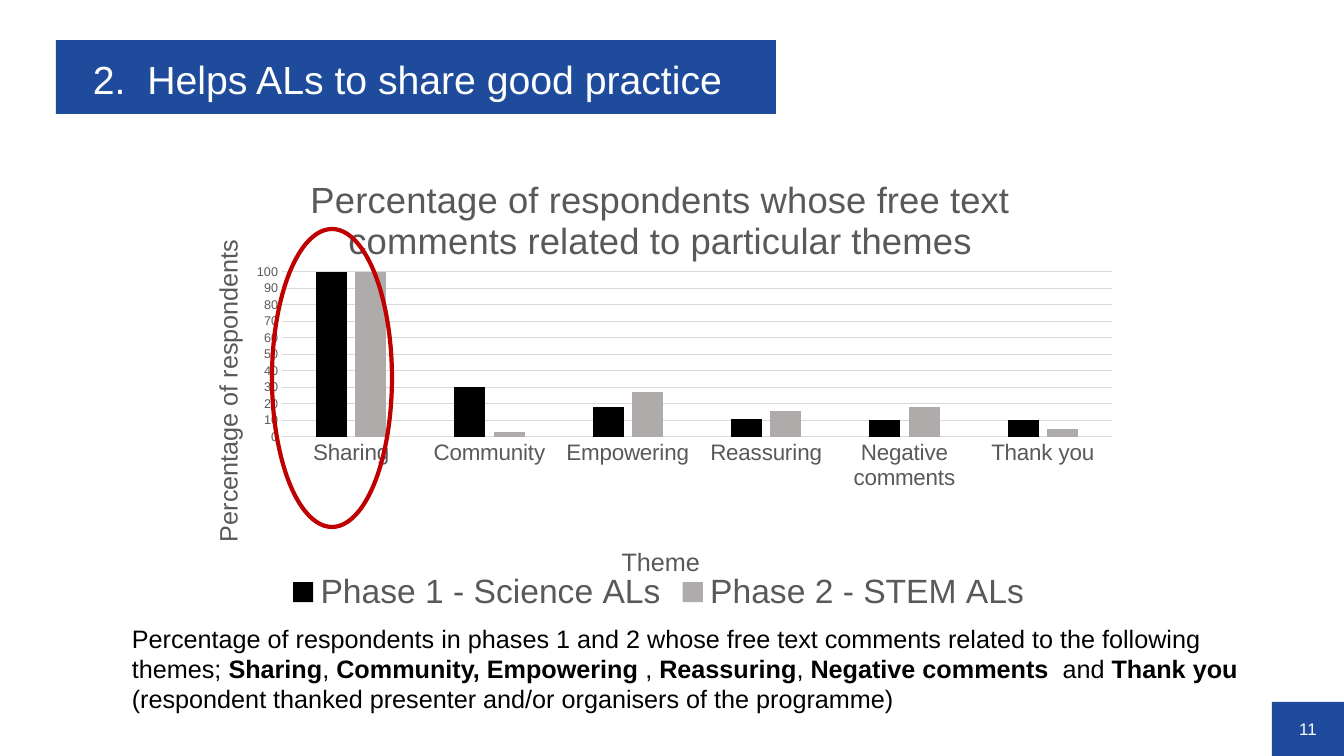
from dataclasses import dataclass

from lxml import etree
from pptx import Presentation
from pptx import util as u
from pptx.chart.data import CategoryChartData
from pptx.dml.color import RGBColor
from pptx.enum import chart as charts
from pptx.enum import shapes, text
from pptx.oxml.ns import qn


@dataclass(frozen=True)
class Theme:
    """Colours, type sizes and font of the slide."""
    blue: str = "1E4B9B"
    white: str = "FFFFFF"
    black: str = "000000"
    silver: str = "AFABAB"
    grey: str = "595959"
    rule: str = "D9D9D9"
    red: str = "C00000"
    font: str = "Arial"
    heading: int = 28
    chart_title: float = 26
    legend: int = 24
    body: int = 18
    category: int = 16
    number: int = 12
    chart_text: int = 10
    scale: int = 9


THEME = Theme()
CHART_BOX = (176, 149, 955, 470)
THEMES = ["Sharing", "Community", "Empowering", "Reassuring", "Negative comments", "Thank you"]
PHASES = [
    ("Phase 1 - Science ALs", [100, 30, 18, 11, 10, 10], THEME.black),
    ("Phase 2 - STEM ALs", [100, 3, 27, 16, 18, 5], THEME.silver),
]
CAPTION = [
    ("Percentage of respondents in phases 1 and 2 whose free text comments "
     "related to the following themes; ", False),
    ("Sharing", True), (", ", False),
    ("Community, Empowering", True), (" , ", False),
    ("Reassuring", True), (", ", False),
    ("Negative comments", True), ("  and ", False),
    ("Thank you", True),
    (" (respondent thanked presenter and/or organisers of the programme)", False),
]


def px(length):
    """Turn pixels into EMU."""
    return u.Emu(round(length * 914400 / 100.8))


def paint(fill, colour):
    """Give a fill one solid colour."""
    fill.solid()
    fill.fore_color.rgb = RGBColor.from_string(colour)


def set_font(font, size, colour):
    """Set face, size and colour of a regular-weight font."""
    font.name = THEME.font
    font.size = u.Pt(size)
    font.bold = False
    font.color.rgb = RGBColor.from_string(colour)


def set_line(line, colour, width):
    """Set colour and width of a line."""
    line.color.rgb = RGBColor.from_string(colour)
    line.width = u.Pt(width)


def add_heading(page, words, box):
    """Turn the title placeholder into a blue heading bar."""
    title = page.shapes.title
    title.left, title.top, title.width, title.height = map(px, box)
    paint(title.fill, THEME.blue)
    frame = title.text_frame
    frame.text = words
    frame.auto_size = text.MSO_AUTO_SIZE.NONE
    frame.vertical_anchor = text.MSO_ANCHOR.MIDDLE
    frame.margin_left, frame.margin_top = px(37), px(4)
    frame.margin_right = frame.margin_bottom = 0
    para = frame.paragraphs[0]
    para.alignment = text.PP_ALIGN.LEFT
    set_font(para.font, THEME.heading, THEME.white)


def add_page_number(page, number, box):
    """Add the blue corner block with the page number."""
    block = page.shapes.add_shape(shapes.MSO_SHAPE.RECTANGLE, *map(px, box))
    block.shadow.inherit = False
    paint(block.fill, THEME.blue)
    block.line.fill.background()
    frame = block.text_frame
    frame.margin_left = frame.margin_top = frame.margin_right = frame.margin_bottom = 0
    frame.vertical_anchor = text.MSO_ANCHOR.MIDDLE
    para = frame.paragraphs[0]
    para.text = number
    para.alignment = text.PP_ALIGN.CENTER
    set_font(para.font, THEME.number, THEME.white)


def add_highlight(page, box):
    """Add a red ring around a group of bars."""
    ring = page.shapes.add_shape(shapes.MSO_SHAPE.OVAL, *map(px, box))
    ring.shadow.inherit = False
    ring.fill.background()
    set_line(ring.line, THEME.red, 3)


def add_caption(page, spans, box):
    """Add a wrapped paragraph with some bold spans."""
    frame = page.shapes.add_textbox(*map(px, box)).text_frame
    frame.word_wrap = True
    para = frame.paragraphs[0]
    set_font(para.font, THEME.body, THEME.black)
    for words, bold in spans:
        span = para.add_run()
        span.text = words
        span.font.bold = bold


def place(part, index, left, top, width=None, height=None):
    """Fix a chart part at a slide position given in pixels."""
    for old in part.findall(qn("c:layout")):
        part.remove(old)
    layout = etree.Element(qn("c:layout"))
    manual = etree.SubElement(layout, qn("c:manualLayout"))
    if width:
        etree.SubElement(manual, qn("c:layoutTarget"), val="inner")
    for mode in ("xMode", "yMode"):
        etree.SubElement(manual, qn(f"c:{mode}"), val="edge")
    chart_left, chart_top, chart_width, chart_height = CHART_BOX
    ratios = {"x": (left - chart_left) / chart_width, "y": (top - chart_top) / chart_height}
    if width:
        ratios.update(w=width / chart_width, h=height / chart_height)
    for name, ratio in ratios.items():
        etree.SubElement(manual, qn(f"c:{name}"), val=f"{ratio:.4f}")
    part.insert(index, layout)


def write_title(title, words, size):
    """Write a grey chart or axis title."""
    title.text_frame.text = words
    set_font(title.text_frame.paragraphs[0].font, size, THEME.grey)


def style_axis(axis, words, size):
    """Set title, labels and tick marks of an axis."""
    write_title(axis.axis_title, words, THEME.body)
    set_font(axis.tick_labels.font, size, THEME.grey)
    axis.major_tick_mark = axis.minor_tick_mark = charts.XL_TICK_MARK.NONE


def add_theme_chart(page):
    """Add the column chart comparing both phases."""
    data = CategoryChartData()
    data.categories = THEMES
    for name, values, _ in PHASES:
        data.add_series(name, values)
    kind = charts.XL_CHART_TYPE.COLUMN_CLUSTERED
    chart = page.shapes.add_chart(kind, *map(px, CHART_BOX), data).chart
    set_font(chart.font, THEME.chart_text, THEME.black)
    write_title(chart.chart_title, "Percentage of respondents whose free text comments "
                "related to particular themes", THEME.chart_title)

    plot = chart.plots[0]
    plot.gap_width, plot.overlap, plot.vary_by_categories = 219, -27, False
    for series, (_, _, colour) in zip(plot.series, PHASES):
        paint(series.format.fill, colour)

    style_axis(chart.category_axis, "Theme", THEME.category)
    set_line(chart.category_axis.format.line, THEME.rule, 0.75)
    scale = chart.value_axis
    style_axis(scale, "Percentage of respondents", THEME.scale)
    scale.minimum_scale, scale.maximum_scale, scale.major_unit = 0, 100, 10
    scale.format.line.fill.background()
    set_line(scale.major_gridlines.format.line, THEME.rule, 0.75)

    chart.has_legend = True
    chart.legend.position = charts.XL_LEGEND_POSITION.BOTTOM
    chart.legend.include_in_layout = False
    set_font(chart.legend.font, THEME.legend, THEME.grey)

    root = chart.element
    place(root.xpath("c:chart/c:title")[0], 1, 304, 169)
    place(root.xpath("c:chart/c:legend")[0], 1, 282, 572)
    place(root.xpath(".//c:plotArea")[0], 0, 282, 272, 830, 165)
    place(root.xpath(".//c:catAx/c:title")[0], 1, 617, 541)
    scale_title = root.xpath(".//c:valAx/c:title")[0]
    place(scale_title, 1, 207, 235)
    scale_title.xpath(".//a:bodyPr")[0].set("rot", "-5400000")


def main():
    """Build and save the slide."""
    deck = Presentation()
    deck.slide_width, deck.slide_height = px(1344), px(756)
    page = deck.slides.add_slide(deck.slide_layouts[5])
    add_page_number(page, "11", (1272, 702, 72, 54))
    add_theme_chart(page)
    add_caption(page, CAPTION, (122, 618, 1173, 132))
    add_highlight(page, (272, 229, 120, 298))
    add_heading(page, "2.  Helps ALs to share good practice", (56, 40, 720, 74))
    deck.save("out.pptx")


if __name__ == "__main__":
    main()
